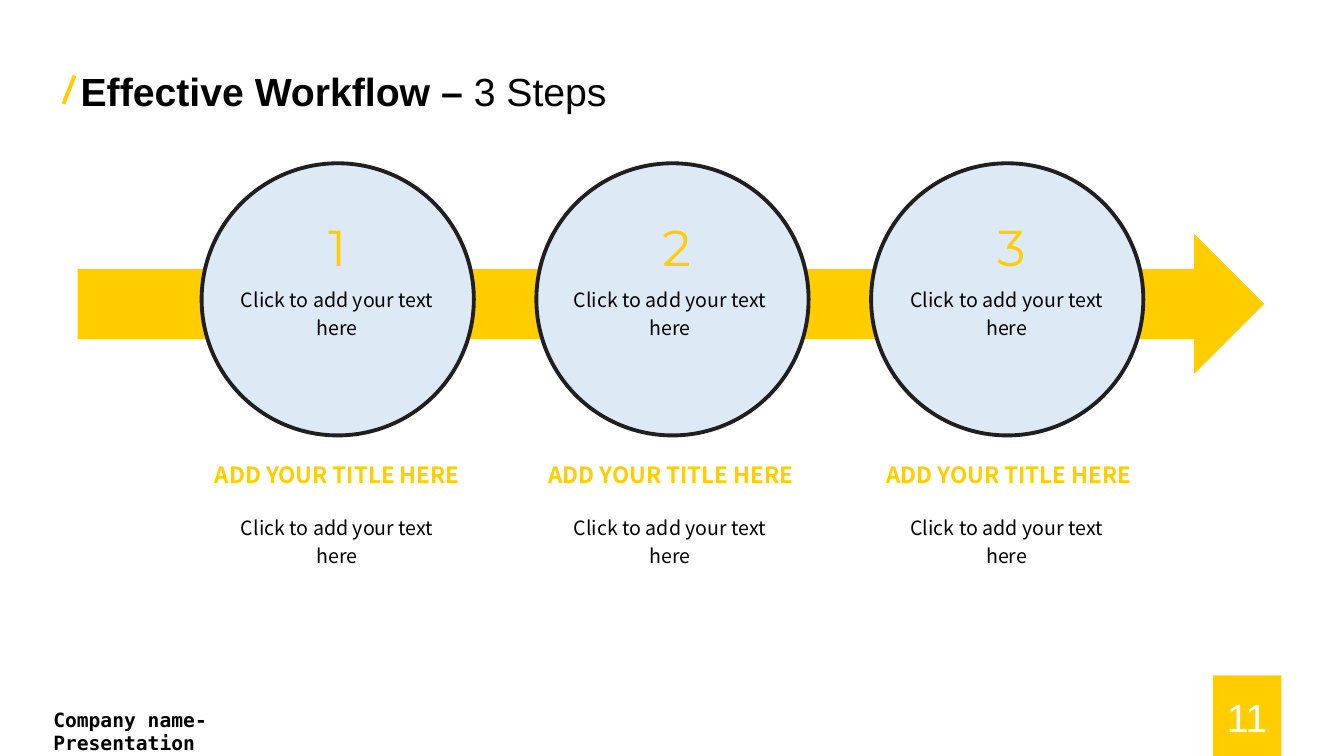
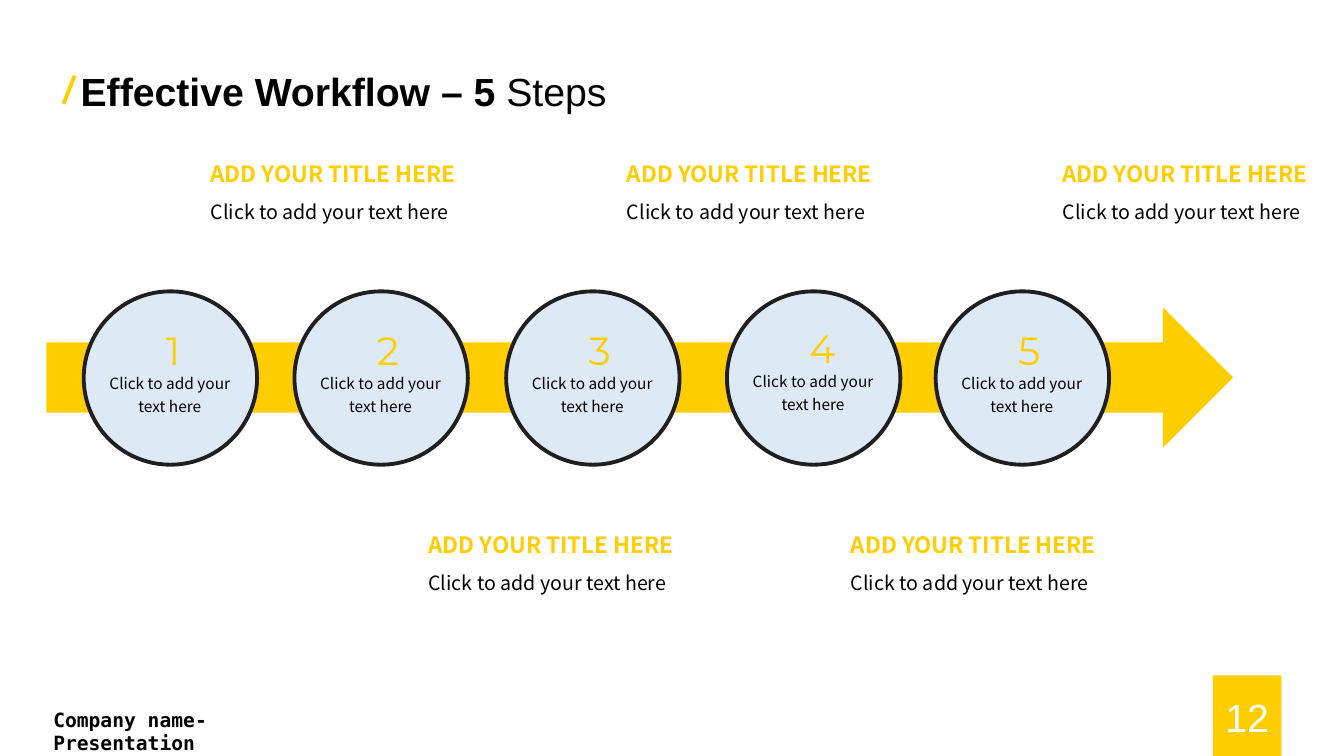
from pptx import Presentation
from pptx.dml.color import RGBColor
from pptx.enum.shapes import MSO_CONNECTOR, MSO_SHAPE
from pptx.enum.text import MSO_ANCHOR, MSO_AUTO_SIZE, PP_ALIGN
from pptx.oxml.ns import qn
from pptx.util import Inches, Pt
from lxml.etree import SubElement

COLORS = {
    "yellow": "FFCD00",
    "pale_blue": "DDEAF6",
    "charcoal": "1F1F1F",
    "black": "000000",
    "white": "FFFFFF",
}
HEADING_FONT = "Arial"
BODY_FONT = "Noto Sans CJK SC"
NUMBER_FONT = "Montserrat"
FOOTER_FONT = "DejaVu Sans Mono"
CAPTION_TITLE = "ADD YOUR TITLE HERE"
PROMPT = "Click to add your text here"
FOOTER = "Company name-Presentation"
TITLE_ONLY = 5


def color(name):
    return RGBColor.from_string(COLORS[name])


class Deck:
    def __init__(self):
        self.prs = Presentation()
        self.prs.slide_width = Inches(13.33)
        self.prs.slide_height = Inches(7.5)
        self.slide = None

    def format_run(self, run, size, font, tint, bold=False):
        run.font.size = Pt(size)
        run.font.name = font
        run.font.bold = bold
        run.font.color.rgb = color(tint)

    def new_slide(self, bold_title, light_title, number):
        self.slide = self.prs.slides.add_slide(self.prs.slide_layouts[TITLE_ONLY])
        self.title(bold_title, light_title)
        self.accent(0.74, 0.75, 0.63, 1.03)
        self.page_number(number)
        self.text(FOOTER, 0.43, 6.97, 3.11, 0.34, 14, FOOTER_FONT, bold=True)

    def title(self, bold_title, light_title):
        heading = self.slide.shapes.title
        heading.left, heading.top = Inches(0.7), Inches(0.62)
        heading.width, heading.height = Inches(5.77), Inches(0.57)
        frame = heading.text_frame
        frame.auto_size = MSO_AUTO_SIZE.NONE
        frame.vertical_anchor = MSO_ANCHOR.MIDDLE
        paragraph = frame.paragraphs[0]
        paragraph.alignment = PP_ALIGN.LEFT
        for words, bold in ((bold_title, True), (light_title, False)):
            run = paragraph.add_run()
            run.text = words
            self.format_run(run, 28, HEADING_FONT, "black", bold)

    def accent(self, x1, y1, x2, y2):
        slash = self.slide.shapes.add_connector(
            MSO_CONNECTOR.STRAIGHT, Inches(x1), Inches(y1), Inches(x2), Inches(y2))
        slash.line.color.rgb = color("yellow")
        slash.line.width = Pt(2.75)
        SubElement(slash.element.spPr, qn("a:effectLst"))

    def shape(self, preset, left, top, width, height, fill, outline=None):
        shape = self.slide.shapes.add_shape(
            preset, Inches(left), Inches(top), Inches(width), Inches(height))
        shape.shadow.inherit = False
        shape.fill.solid()
        shape.fill.fore_color.rgb = color(fill)
        if outline:
            shape.line.color.rgb = color(outline)
            shape.line.width = Pt(2.75)
        else:
            shape.line.fill.background()
        return shape

    def page_number(self, number):
        badge = self.shape(MSO_SHAPE.RECTANGLE, 12.03, 6.7, 0.68, 0.82, "yellow")
        frame = badge.text_frame
        frame.text = str(number)
        frame.vertical_anchor = MSO_ANCHOR.MIDDLE
        paragraph = frame.paragraphs[0]
        paragraph.alignment = PP_ALIGN.CENTER
        self.format_run(paragraph.runs[0], 28, HEADING_FONT, "white")

    def arrow(self, left, top):
        self.shape(MSO_SHAPE.RIGHT_ARROW, left, top, 11.77, 1.39, "yellow")

    def circle(self, left, top, diameter):
        self.shape(MSO_SHAPE.OVAL, left, top, diameter, diameter, "pale_blue", "charcoal")

    def text(self, words, left, top, width, height, size, font, tint="black",
             bold=False, align=PP_ALIGN.LEFT, spacing=None):
        box = self.slide.shapes.add_textbox(
            Inches(left), Inches(top), Inches(width), Inches(height))
        frame = box.text_frame
        frame.word_wrap = True
        frame.auto_size = MSO_AUTO_SIZE.SHAPE_TO_FIT_TEXT
        frame.text = words
        paragraph = frame.paragraphs[0]
        paragraph.alignment = align
        paragraph.line_spacing = spacing
        self.format_run(paragraph.runs[0], size, font, tint, bold)

    def step_number(self, number, left, top, width, height, size):
        self.text(str(number), left, top, width, height, size, NUMBER_FONT,
                  "yellow", align=PP_ALIGN.CENTER)

    def caption_title(self, left, top, align=PP_ALIGN.LEFT):
        self.text(CAPTION_TITLE, left, top, 2.81, 0.37, 16, BODY_FONT,
                  "yellow", True, align)

    def prompt(self, left, top, width, height, size=14, align=PP_ALIGN.CENTER):
        self.text(PROMPT, left, top, width, height, size, BODY_FONT,
                  align=align, spacing=1.2)


def three_steps(deck):
    deck.new_slide("Effective Workflow – ", "3 Steps", 11)
    deck.arrow(0.77, 2.32)
    columns = ((2.27, 1.94), (5.57, 5.25), (8.91, 8.6))
    for index, (prompt_left, title_left) in enumerate(columns):
        circle_left = 2 + 3.32 * index
        deck.circle(circle_left, 1.62, 2.7)
        deck.step_number(index + 1, circle_left + 1.15, 2.09, 0.39, 0.71, 36)
        deck.caption_title(title_left, 4.53, PP_ALIGN.CENTER)
        for top in (2.76, 5.02):
            deck.prompt(prompt_left, top, 2.15, 0.67)


def five_steps(deck):
    deck.new_slide("Effective Workflow – 5", " Steps", 12)
    deck.arrow(0.46, 3.05)
    steps = ((0.83, 0), (2.92, 0), (5.02, 0), (7.21, -0.02), (9.28, 0))
    for number, (left, shift) in enumerate(steps, 1):
        deck.circle(left, 2.89, 1.72)
        deck.step_number(number, left + 0.72, 3.19 + shift, 0.28, 0.57, 28)
        deck.prompt(left + 0.09, 3.63 + shift, 1.53, 0.55, 11)
    for top, lefts in ((1.54, (1.99, 6.12, 10.44)), (5.22, (4.15, 8.34))):
        for left in lefts:
            deck.caption_title(left, top)
            deck.prompt(left, top + 0.35, 2.72, 0.38, align=PP_ALIGN.LEFT)


def main():
    deck = Deck()
    three_steps(deck)
    five_steps(deck)
    deck.prs.save("out.pptx")


if __name__ == "__main__":
    main()
